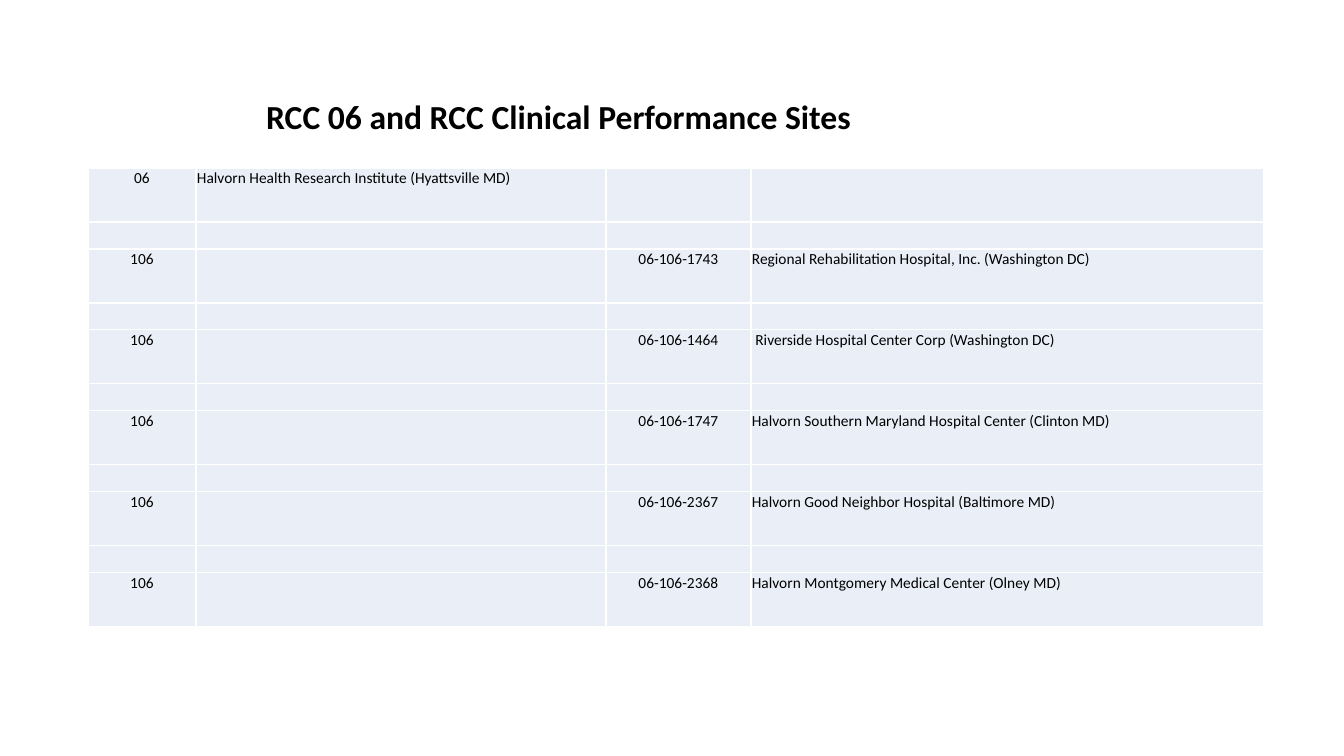
import pptx
import pptx.dml.color
import pptx.enum.text
import pptx.oxml
import pptx.oxml.ns
import pptx.util
from lxml import etree

SCALE = 914400 / 100.8
FONT = "Calibri"
COLS = [108, 410, 145, 513]
TALL, GAP = 54, 27
ALIGN = pptx.enum.text.PP_ALIGN
SITES = [
    ("06", "Halvorn Health Research Institute (Hyattsville MD)", "", ""),
    ("106", "", "06-106-1743", "Regional Rehabilitation Hospital, Inc. (Washington DC)"),
    ("106", "", "06-106-1464", " Riverside Hospital Center Corp (Washington DC)"),
    ("106", "", "06-106-1747", "Halvorn Southern Maryland Hospital Center (Clinton MD)"),
    ("106", "", "06-106-2367", "Halvorn Good Neighbor Hospital (Baltimore MD)"),
    ("106", "", "06-106-2368", "Halvorn Montgomery Medical Center (Olney MD)"),
]


def px(n):
    """Turn pixels into EMU."""
    return pptx.util.Emu(round(n * SCALE))


def color(code):
    """Turn a hex string into a colour."""
    return pptx.dml.color.RGBColor.from_string(code)


def style(para, size, bold=False):
    """Format the runs of a paragraph."""
    for run in para.runs:
        run.font.name = FONT
        run.font.size = pptx.util.Pt(size)
        run.font.bold = bold
        run.font.color.rgb = color("000000")


def border(cell, code):
    """Draw one-point lines on all sides of a cell."""
    props = cell._tc.get_or_add_tcPr()
    for i, side in enumerate(("lnL", "lnR", "lnT", "lnB")):
        line = pptx.oxml.parse_xml(
            f'<a:{side} {pptx.oxml.ns.nsdecls("a")} w="12700"><a:solidFill>'
            f'<a:srgbClr val="{code}"/></a:solidFill></a:{side}>')
        props.insert(i, line)


def fill_cell(cell, text, align):
    """Write and format one cell."""
    cell.margin_left = cell.margin_right = cell.margin_top = px(1)
    cell.margin_bottom = 0
    cell.fill.solid()
    cell.fill.fore_color.rgb = color("EAEFF7")
    border(cell, "FFFFFF")
    para = cell.text_frame.paragraphs[0]
    para.text = text
    para.alignment = align
    style(para, 11)
    if not text:
        etree.SubElement(para._p, pptx.oxml.ns.qn("a:endParaRPr"), sz="1100")


def add_title(slide, left, top, width, height):
    """Place the slide title in its box."""
    title = slide.shapes.title
    title.left, title.top, title.width, title.height = map(px, (left, top, width, height))
    frame = title.text_frame
    frame.text = "RCC 06 and RCC Clinical Performance Sites"
    frame.word_wrap = True
    frame.auto_size = pptx.enum.text.MSO_AUTO_SIZE.NONE
    frame.vertical_anchor = pptx.enum.text.MSO_ANCHOR.TOP
    frame.paragraphs[0].alignment = ALIGN.LEFT
    style(frame.paragraphs[0], 24, True)


def add_sites(slide, left, top):
    """Place the site table, with a low empty row between sites."""
    count = 2 * len(SITES) - 1
    high = TALL * len(SITES) + GAP * (len(SITES) - 1)
    table = slide.shapes.add_table(
        count, len(COLS), px(left), px(top), px(sum(COLS)), px(high)).table
    table.first_row = table.horz_banding = False
    for col, width in zip(table.columns, COLS):
        col.width = px(width)
    for r, row in enumerate(table.rows):
        row.height = px(GAP if r % 2 else TALL)
        texts = [""] * len(COLS) if r % 2 else SITES[r // 2]
        for c, text in enumerate(texts):
            fill_cell(table.cell(r, c), text, ALIGN.LEFT if c % 2 else ALIGN.CENTER)


def main():
    """Build and save the slide."""
    deck = pptx.Presentation()
    deck.slide_width, deck.slide_height = px(1344), px(756)
    slide = deck.slides.add_slide(deck.slide_layouts[5])
    add_title(slide, 256, 91, 889, 50)
    add_sites(slide, 88, 168)
    deck.save("out.pptx")


if __name__ == "__main__":
    main()
